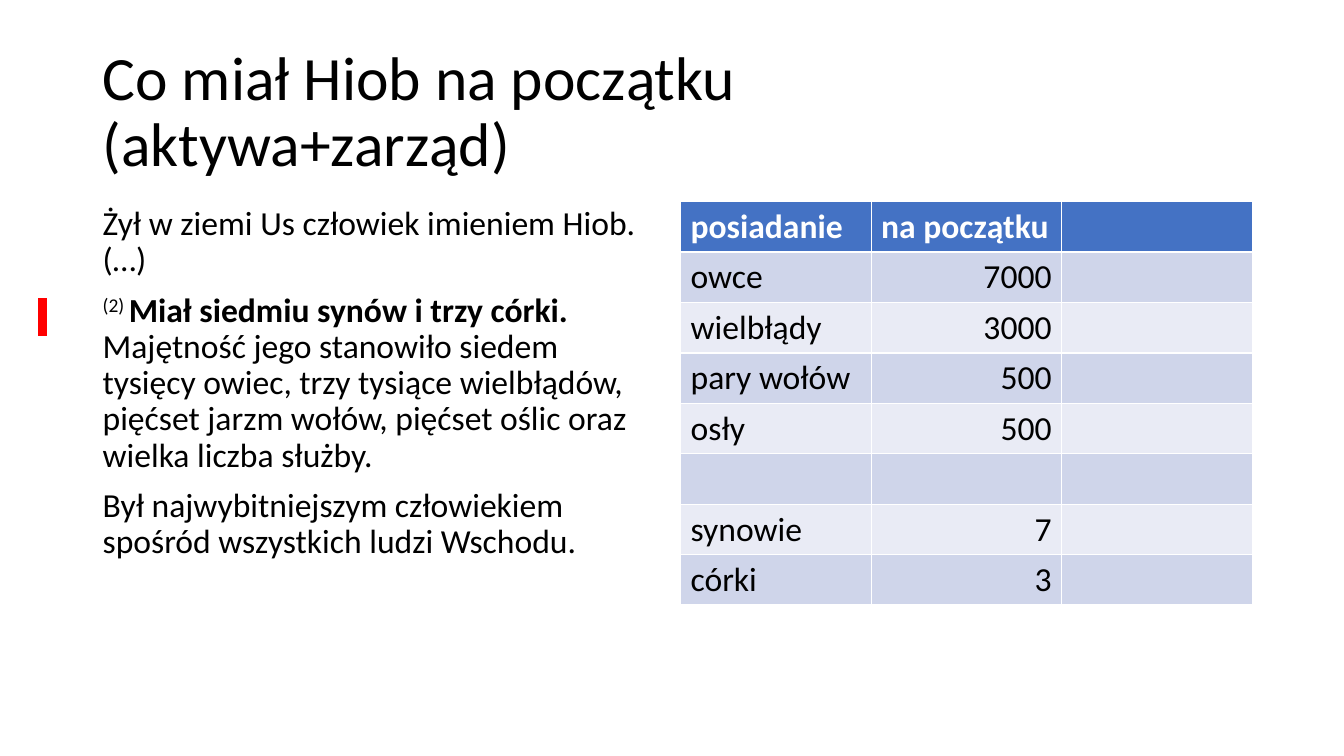
from lxml import etree
from pptx import Presentation
from pptx.dml.color import RGBColor
from pptx.enum import shapes, text
from pptx.oxml import ns
from pptx.util import Inches, Pt

BLACK = RGBColor(0x00, 0x00, 0x00)
WHITE = RGBColor(0xFF, 0xFF, 0xFF)
RED = RGBColor(0xFF, 0x00, 0x00)
HEADER_BLUE = RGBColor(0x44, 0x72, 0xC4)
BANDS = (RGBColor(0xCF, 0xD5, 0xEA), RGBColor(0xE9, 0xEB, 0xF5))
FONT = "Calibri"

TITLE = "Co miał Hiob na początku \n(aktywa+zarząd)"

# Each passage is a list of (wording, style) runs
PASSAGES = [
    [("Żył w ziemi Us człowiek imieniem Hiob. (…)", "plain")],
    [("(2) ", "superscript"),
     ("Miał siedmiu synów i trzy córki. ", "bold"),
     ("Majętność jego stanowiło siedem tysięcy owiec, trzy tysiące wielbłądów, "
      "pięćset jarzm wołów, pięćset oślic oraz wielka liczba służby.", "plain")],
    [("Był najwybitniejszym człowiekiem spośród wszystkich ludzi Wschodu.", "plain")],
]

POSSESSIONS = [
    ("posiadanie", "na początku", ""),
    ("owce", "7000", ""),
    ("wielbłądy", "3000", ""),
    ("pary wołów", "500", ""),
    ("osły", "500", ""),
    ("", "", ""),
    ("synowie", "7", ""),
    ("córki", "3", ""),
]


def style_run(run, size, color=BLACK, bold=False):
    run.font.name = FONT
    run.font.size = Pt(size)
    run.font.bold = bold
    run.font.color.rgb = color


def add_text_frame(slide, box, anchor):
    frame = slide.shapes.add_textbox(*map(Inches, box)).text_frame
    frame.word_wrap = True
    frame.vertical_anchor = anchor
    return frame


def add_title(slide, box):
    heading = add_text_frame(slide, box, text.MSO_ANCHOR.MIDDLE).paragraphs[0]
    heading.text = TITLE
    heading.line_spacing = 0.9
    for run in heading.runs:
        style_run(run, 44)


def add_passages(slide, box):
    frame = add_text_frame(slide, box, text.MSO_ANCHOR.TOP)
    for index, passage in enumerate(PASSAGES):
        paragraph = frame.add_paragraph() if index else frame.paragraphs[0]
        paragraph.line_spacing = 0.9
        paragraph.space_before = Pt(10)
        for wording, style in passage:
            run = paragraph.add_run()
            run.text = wording
            style_run(run, 24, bold=style == "bold")
            if style == "superscript":
                run.font._element.set("baseline", "30000")


def add_possessions(slide, box):
    left, top, width, height = map(Inches, box)
    table = slide.shapes.add_table(
        len(POSSESSIONS), len(POSSESSIONS[0]), left, top, width, height).table
    for row, entries in enumerate(POSSESSIONS):
        header = row == 0
        for column, entry in enumerate(entries):
            cell = table.cell(row, column)
            cell.fill.solid()
            cell.fill.fore_color.rgb = HEADER_BLUE if header else BANDS[(row - 1) % 2]
            cell.text_frame.text = entry
            paragraph = cell.text_frame.paragraphs[0]
            if column == 1 and not header:
                paragraph.alignment = text.PP_ALIGN.RIGHT
            for run in paragraph.runs:
                style_run(run, 24, WHITE if header else BLACK, header)


def add_verse_marker(slide, left, top, height):
    marker = slide.shapes.add_connector(
        shapes.MSO_CONNECTOR.STRAIGHT,
        Inches(left), Inches(top), Inches(left), Inches(top + height))
    marker.line.color.rgb = RED
    marker.line.width = Pt(6)
    etree.SubElement(marker._element.spPr, ns.qn("a:effectLst"))


def main():
    deck = Presentation()
    deck.slide_width, deck.slide_height = Inches(13.33), Inches(7.5)
    slide = deck.slides.add_slide(deck.slide_layouts[6])

    # Heading across the top
    add_title(slide, (0.92, 0.4, 11.5, 1.45))
    # Bible text on the left, possessions on the right
    add_passages(slide, (0.92, 2, 5.67, 4.76))
    add_possessions(slide, (6.75, 2, 5.67, 4))
    # Red mark beside the second verse
    add_verse_marker(slide, 0.42, 2.96, 0.37)

    deck.save("out.pptx")


if __name__ == "__main__":
    main()
